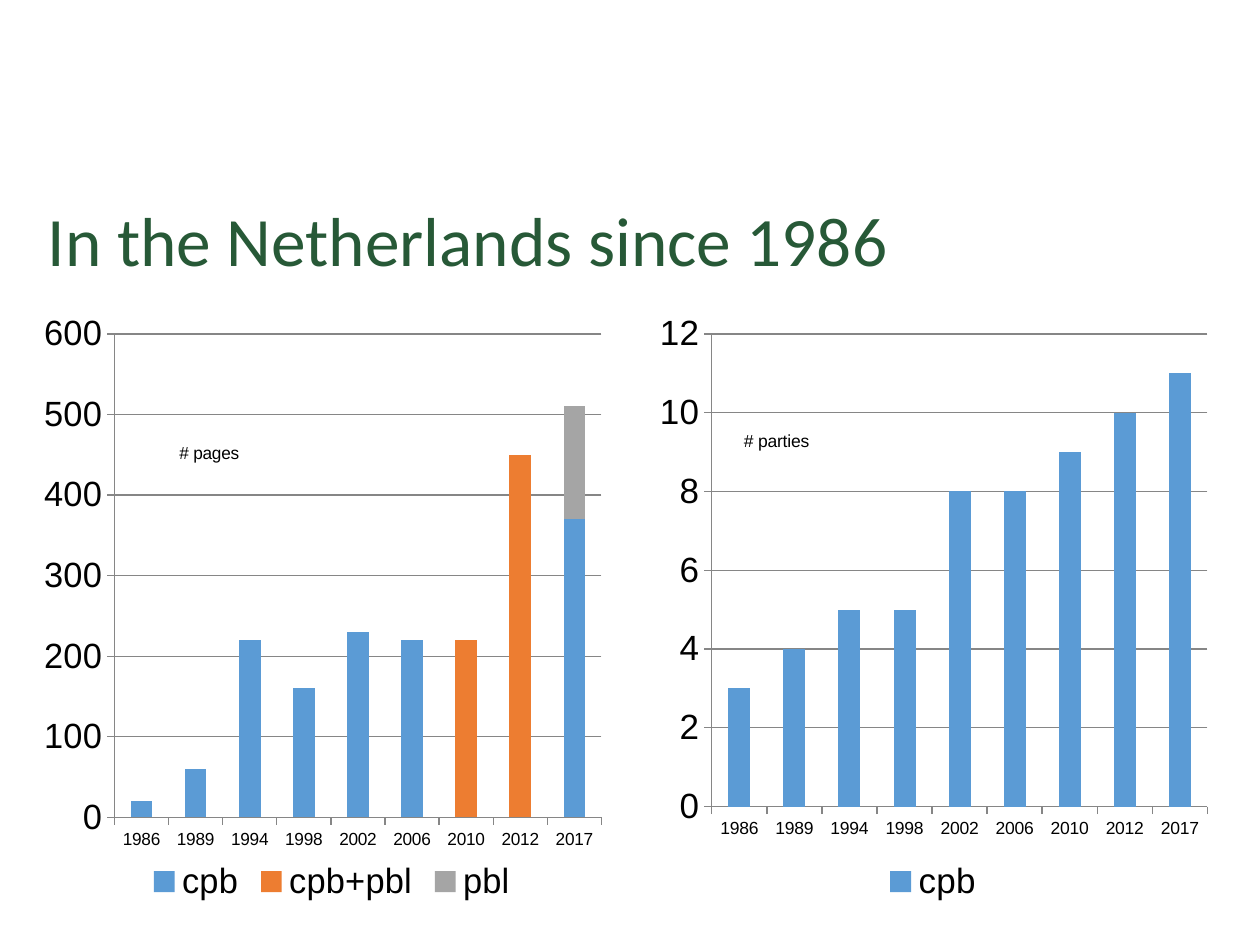
from dataclasses import dataclass

from lxml.etree import Element, SubElement
from pptx import Presentation
from pptx.chart.data import CategoryChartData as Data
from pptx.dml.color import RGBColor as Rgb
from pptx.enum.chart import XL_CHART_TYPE as Kind, XL_LEGEND_POSITION as Spot, XL_TICK_MARK as Tick
from pptx.enum.text import MSO_ANCHOR as Anchor
from pptx.oxml.ns import qn
from pptx.util import Inches, Pt


@dataclass(frozen=True)
class Theme:
    head: str = "275937"
    ink: str = "000000"
    line: str = "868686"
    bars: tuple = ("5B9BD5", "ED7D31", "A5A5A5")
    head_font: str = "Calibri"
    font: str = "Arial"
    head_size: float = 39.6
    size: int = 20
    small: int = 10


class Deck:
    """Holds the theme and the current slide and draws each kind of element."""

    def __init__(self, theme):
        self.theme = theme
        self.show = Presentation()
        self.show.slide_width, self.show.slide_height = Inches(10), Inches(7.5)
        self.slide = self.show.slides.add_slide(self.show.slide_layouts[6])

    def style(self, font, size, color, name):
        font.size, font.name, font.bold = Pt(size), name, False
        font.color.rgb = Rgb.from_string(color)

    def title(self, text, *box):
        frame = self.slide.shapes.add_textbox(*map(Inches, box)).text_frame
        frame.word_wrap, frame.vertical_anchor = True, Anchor.MIDDLE
        frame.text = text
        para = frame.paragraphs[0]
        para.line_spacing = 0.9
        look = self.theme
        self.style(para.runs[0].font, look.head_size, look.head, look.head_font)

    def place(self, host, index, **parts):
        for old in host.findall(qn("c:layout")):
            host.remove(old)
        layout = Element(qn("c:layout"))
        manual = SubElement(layout, qn("c:manualLayout"))
        for tag, val in parts.items():
            SubElement(manual, qn("c:" + tag)).set("val", str(val))
        host.insert(index, layout)

    def rule(self, line):
        line.width = Pt(0.75)
        line.color.rgb = Rgb.from_string(self.theme.line)

    def label(self, axis, text, x, y):
        look = self.theme
        frame = axis.axis_title.text_frame
        frame.text = text
        self.style(frame.paragraphs[0].runs[0].font, look.small, look.ink, look.font)
        body = frame._txBody.bodyPr
        body.set("rot", "0")
        body.set("vert", "horz")
        self.place(axis.axis_title._element, 1, xMode="edge", yMode="edge", x=x, y=y)

    def chart(self, box, cats, rows, top, step, height, label):
        look = self.theme
        data = Data()
        data.categories = cats
        for name, vals in rows.items():
            data.add_series(name, vals)
        frame = self.slide.shapes.add_chart(Kind.COLUMN_STACKED, *map(Inches, box), data)
        chart = frame.chart
        chart.has_title = False
        self.style(chart.font, look.size, look.ink, look.font)
        chart.has_legend = True
        chart.legend.position = Spot.BOTTOM
        chart.legend.include_in_layout = False
        plot = chart.plots[0]
        plot.gap_width, plot.overlap, plot.vary_by_categories = 150, 100, False
        for row, color in zip(plot.series, look.bars):
            row.format.fill.solid()
            row.format.fill.fore_color.rgb = Rgb.from_string(color)
        cat, val = chart.category_axis, chart.value_axis
        for axis in (cat, val):
            axis.major_tick_mark, axis.minor_tick_mark = Tick.OUTSIDE, Tick.NONE
            self.rule(axis.format.line)
        self.style(cat.tick_labels.font, look.small, look.ink, look.font)
        val.minimum_scale, val.maximum_scale, val.major_unit = 0, top, step
        val.has_major_gridlines = True
        self.rule(val.major_gridlines.format.line)
        self.label(val, *label)
        area = chart._chartSpace.chart.plotArea
        self.place(area, 0, layoutTarget="inner", xMode="edge", yMode="edge",
                   x=0.109, y=0.034, w=0.876, h=height)


def main():
    deck = Deck(Theme())
    deck.title("In the Netherlands since 1986", 0.28, 1.62, 9.21, 0.63)
    years = "1986 1989 1994 1998 2002 2006 2010 2012 2017".split()
    gap = None
    pages = {
        "cpb": (20, 60, 220, 160, 230, 220, gap, gap, 370),
        "cpb+pbl": (gap,) * 6 + (220, 450, gap),
        "pbl": (gap,) * 8 + (140,),
    }
    parties = {"cpb": (3, 4, 5, 5, 8, 8, 9, 10, 11)}
    deck.chart((0.35, 2.49, 4.49, 4.72), years, pages, 600, 100, 0.813, ("# pages", 0.22, 0.21))
    deck.chart((5.16, 2.49, 4.49, 4.72), years, parties, 12, 2, 0.795, ("# parties", 0.16, 0.19))
    deck.show.save("out.pptx")


if __name__ == "__main__":
    main()
